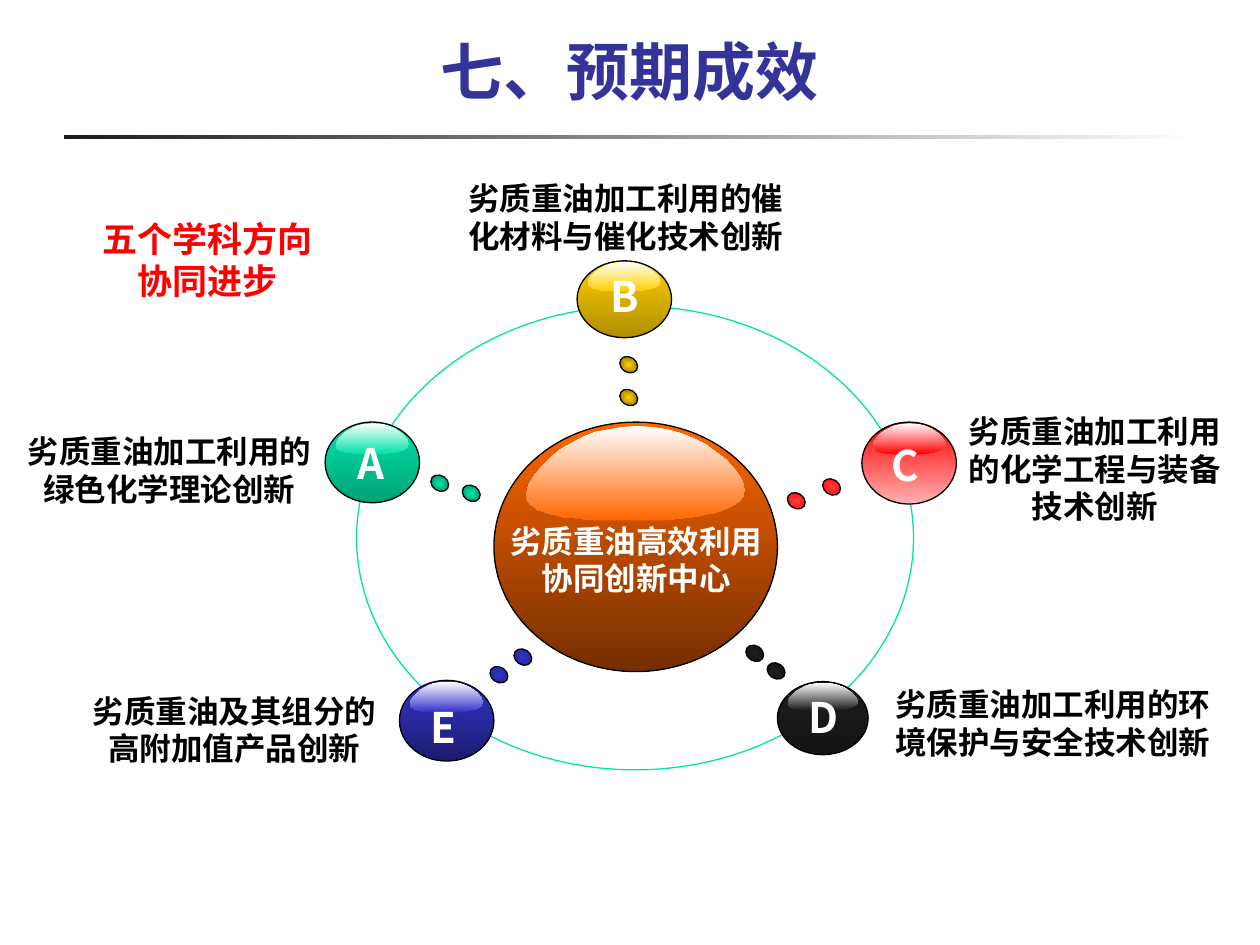
from lxml import etree
from pptx import Presentation
from pptx.dml.color import RGBColor
from pptx.enum.shapes import MSO_SHAPE
from pptx.enum.text import MSO_ANCHOR, MSO_AUTO_SIZE, PP_ALIGN
from pptx.oxml.ns import qn
from pptx.util import Emu, Pt

OVAL, RECT = MSO_SHAPE.OVAL, MSO_SHAPE.RECTANGLE
CENTER, BOTTOM = PP_ALIGN.CENTER, MSO_ANCHOR.BOTTOM
FIT_SHAPE = MSO_AUTO_SIZE.SHAPE_TO_FIT_TEXT
PX = 9144  # 100 px to the inch
CJK = "Noto Sans CJK SC"
DOWN, RIGHT = 270, 0  # gradient angles, counter-clockwise
DOT_SIZE, DOT_TILT = (12, 15), 303.8

# Highlight outline, drawn in a 174 x 75 box
GLOSS_SIZE = (174, 75)
GLOSS = [
    (171, 42), (173, 47), (174, 51), (173, 55), (171, 58), (168, 61),
    (163, 64), (158, 66), (151, 69), (144, 70), (136, 72), (127, 73),
    (118, 74), (109, 75), (62, 75), (54, 75), (46, 74), (38, 73), (31, 73),
    (25, 71), (19, 70), (14, 68), (9, 67), (6, 64), (3, 62), (1, 59),
    (0, 55), (1, 52), (2, 47), (7, 39), (13, 32), (20, 25), (27, 19),
    (36, 14), (45, 9), (55, 5), (66, 3), (77, 1), (88, 0), (100, 1),
    (112, 3), (123, 6), (133, 10), (143, 15), (151, 21), (159, 27),
    (166, 35),
]

# Ball box, top and bottom colour, letter position,
# dot colours, dot positions, label and its box
DIRECTIONS = {
    "A": ((258, 335, 75, 64), "00E4A8", "00A277", (274, 342),
          ("00E4A8", "008361"), [(343, 376), (368, 384)],
          "劣质重油加工利用的绿色化学理论创新", (11, 338, 247, 70)),
    "B": ((458, 207, 75, 61), "FFCF01", "B08E01", (475, 210),
          ("FFCF01", "745E00"), [(493, 282), (493, 308)],
          "劣质重油加工利用的催化材料与催化技术创新", (351, 137, 291, 70)),
    "C": ((684, 335, 75, 65), "FF0000", "FFB0B0", (698, 344),
          ("FF3E3E", "FF0000"), [(654, 379), (626, 390)],
          "劣质重油加工利用的化学工程与装备技术创新", (758, 322, 222, 100)),
    "D": ((617, 541, 72, 58), "1C1C1C", "141414", (632, 544),
          ("1C1C1C", "131313"), [(610, 525), (593, 511)],
          "劣质重油加工利用的环境保护与安全技术创新", (698, 539, 275, 70)),
    "E": ((317, 540, 75, 64), "3333CC", "1C1C6E", (332, 552),
          ("3333CC", "222288"), [(390, 528), (409, 514)],
          "劣质重油及其组分的高附加值产品创新", (61, 544, 250, 70)),
}


def rgb(value):
    return RGBColor.from_string(value)


def px(*lengths):
    return [Emu(round(length * PX)) for length in lengths]


class Board:
    """Holds the style and the slide being drawn."""

    text_style = {"size": Pt(18), "bold": True, "name": CJK}

    def __init__(self, slide):
        self.slide = slide
        self.shapes = slide.shapes

    def gradient(self, shape, colours, angle):
        shape.fill.gradient()
        shape.fill.gradient_angle = angle
        for stop, colour in zip(shape.fill.gradient_stops, colours):
            stop.color.rgb = rgb(colour)

    def shape(self, kind, box, colours=None, line=None, angle=DOWN):
        shape = self.shapes.add_shape(kind, *px(*box))
        shape.shadow.inherit = False
        if colours:
            self.gradient(shape, colours, angle)
        else:
            shape.fill.background()
        if line:
            shape.line.color.rgb = rgb(line)
            shape.line.width = Pt(0.75)
        else:
            shape.line.fill.background()
        return shape

    def ball(self, box, top_colour, bottom_colour):
        self.shape(OVAL, box, (top_colour, bottom_colour), "000000")
        # The highlight keeps the same share of every ball
        left, top, width, height = box
        left, top = left + 0.113 * width, top + 0.015 * height
        x_scale = 0.773 * width / GLOSS_SIZE[0]
        y_scale = 0.379 * height / GLOSS_SIZE[1]
        points = [px(left + x * x_scale, top + y * y_scale) for x, y in GLOSS]
        outline = self.shapes.build_freeform(*points[0])
        outline.add_line_segments(points[1:], close=True)
        gloss = outline.convert_to_shape()
        gloss.shadow.inherit = False
        self.gradient(gloss, ("FFFFFF", top_colour), DOWN)
        gloss.line.fill.background()

    def dot(self, position, colours):
        dot = self.shape(OVAL, (*position, *DOT_SIZE), colours, "000000")
        dot.rotation = DOT_TILT
        # Turn the linear gradient into one that spreads from the centre
        grad = dot._element.spPr.find(qn("a:gradFill"))
        grad.remove(grad.find(qn("a:lin")))
        spread = etree.SubElement(grad, qn("a:path"), path="shape")
        etree.SubElement(spread, qn("a:fillToRect"),
                         l="50000", t="50000", r="50000", b="50000")

    def text(self, box, lines, colour="000000", wrap=True, anchor=None, **style):
        frame = self.shapes.add_textbox(*px(*box)).text_frame
        frame.word_wrap = wrap
        if anchor is None:
            frame.auto_size = FIT_SHAPE
        else:
            frame.vertical_anchor = anchor
        for index, line in enumerate(lines):
            paragraph = frame.add_paragraph() if index else frame.paragraphs[0]
            paragraph.alignment = CENTER
            run = paragraph.add_run()
            run.text = line
            run.font.color.rgb = rgb(colour)
            for name, value in {**self.text_style, **style}.items():
                setattr(run.font, name, value)
            etree.SubElement(run._r.get_or_add_rPr(), qn("a:ea"), typeface=CJK)


def main():
    deck = Presentation()
    deck.slide_width, deck.slide_height = px(1000, 750)
    board = Board(deck.slides.add_slide(deck.slide_layouts[6]))

    # Title and rule
    board.shape(RECT, (51, 107, 900, 3), ("1C1C1C", "FFFFFF"), angle=RIGHT)
    board.text((0, 23, 1000, 68), ["七、预期成效"], "333399",
               anchor=BOTTOM, size=Pt(36), name="Arial")
    board.text((70, 168, 190, 77), ["五个学科方向", "协同进步"], "FF0000",
               wrap=False, size=Pt(20), name="Arial")

    # Ring and centre
    board.shape(OVAL, (283, 243, 442, 368), line="00E4A8")
    board.ball((392, 335, 225, 198), "FF6600", "742E00")
    board.text((381, 409, 248, 70), ["劣质重油高效利用", "协同创新中心"], "FFFFFF")

    # Five directions around the ring
    for letter, parts in DIRECTIONS.items():
        ball, top, bottom, letter_at, dot_colours, dots, label, label_box = parts
        board.ball(ball, top, bottom)
        board.text((*letter_at, 37, 50), [letter], "FFFFFF",
                   wrap=False, size=Pt(24))
        for position in dots:
            board.dot(position, dot_colours)
        board.text(label_box, [label])

    deck.save("out.pptx")


if __name__ == "__main__":
    main()
